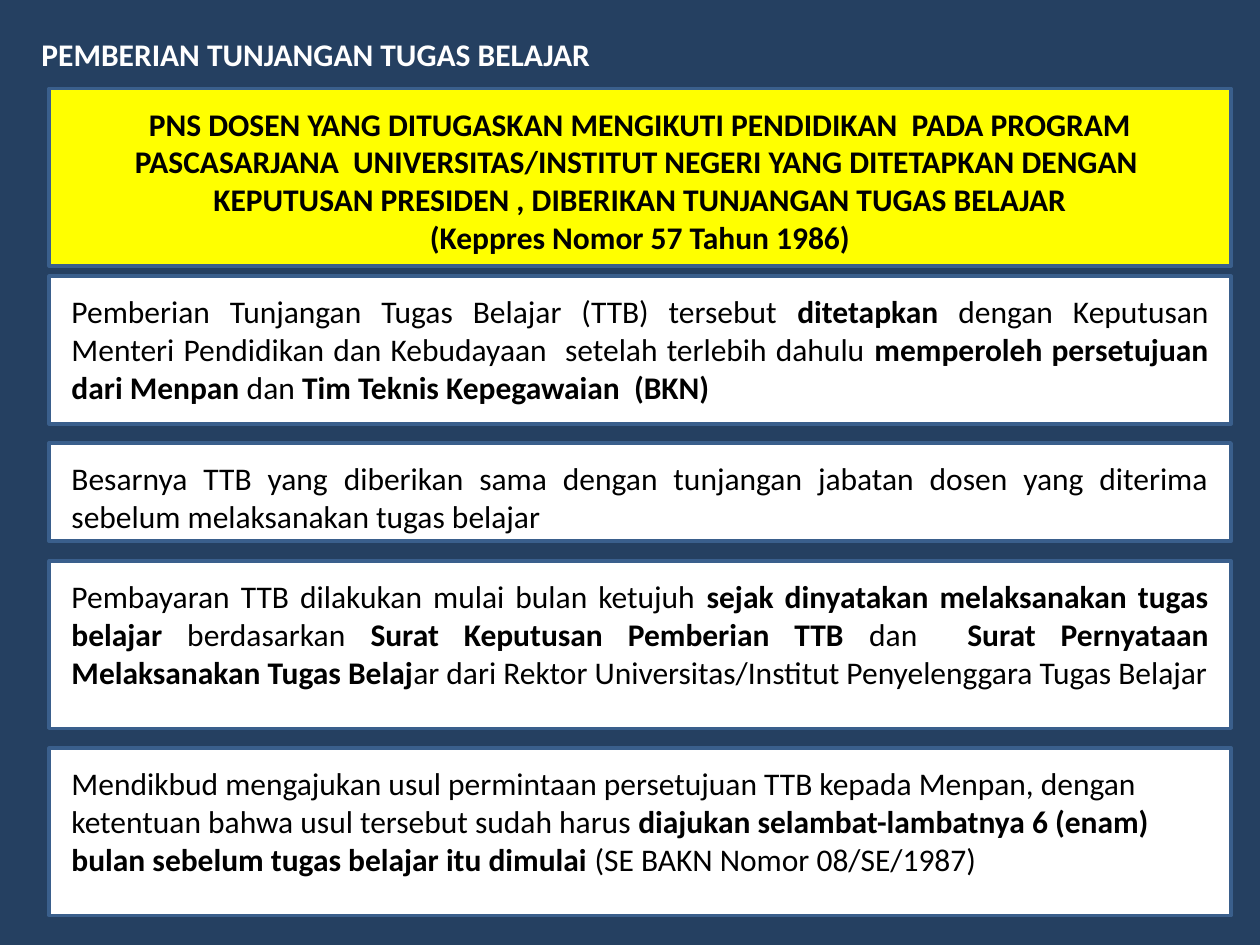
from dataclasses import dataclass

from pptx import Presentation
from pptx.dml.color import RGBColor
from pptx.enum.shapes import MSO_SHAPE
from pptx.enum.text import MSO_AUTO_SIZE, PP_ALIGN
from pptx.util import Pt


@dataclass(frozen=True)
class Theme:
    background: str = "254061"
    border: str = "3A5F8C"
    highlight: str = "FFFF00"
    panel: str = "FFFFFF"
    title: str = "FFFFFF"
    body: str = "000000"
    font: str = "Calibri"
    size: int = 18
    border_width: int = 2


PANEL_LEFT, PANEL_WIDTH = 28.1, 675.4
PADDING = 5.7
LINE_HEIGHT, TEXT_MARGINS = 21.9, 7.2

HEADING = [
    ["", "PNS DOSEN YANG DITUGASKAN MENGIKUTI PENDIDIKAN  PADA PROGRAM "
         "PASCASARJANA  UNIVERSITAS/INSTITUT NEGERI YANG DITETAPKAN DENGAN  "
         "KEPUTUSAN PRESIDEN , DIBERIKAN TUNJANGAN TUGAS BELAJAR"],
    ["", "(Keppres Nomor 57 Tahun 1986)"],
]
APPROVAL = [[
    "Pemberian Tunjangan Tugas Belajar (TTB) tersebut ", "ditetapkan ",
    "dengan Keputusan Menteri Pendidikan dan Kebudayaan  setelah terlebih dahulu ",
    "memperoleh persetujuan dari Menpan", " dan ", "Tim Teknis Kepegawaian  (BKN)",
]]
AMOUNT = [[
    "Besarnya TTB yang diberikan sama dengan tunjangan jabatan dosen yang "
    "diterima sebelum melaksanakan tugas belajar",
]]
PAYMENT = [[
    "Pembayaran TTB dilakukan mulai bulan ketujuh ",
    "sejak dinyatakan melaksanakan tugas belajar", " berdasarkan ",
    "Surat Keputusan Pemberian TTB ", "dan  ",
    "Surat Pernyataan Melaksanakan Tugas Belaj",
    "ar dari Rektor Universitas/Institut Penyelenggara Tugas Belajar",
]]
PROPOSAL = [[
    "Mendikbud mengajukan usul permintaan persetujuan TTB kepada Menpan, dengan "
    "ketentuan bahwa usul tersebut sudah harus ",
    "diajukan selambat-lambatnya 6 (enam) bulan sebelum tugas belajar itu dimulai ",
    "(SE BAKN Nomor 08/SE/1987)",
]]


class SlideBuilder:
    def __init__(self, slide, theme):
        self.slide = slide
        self.theme = theme

    def background(self):
        fill = self.slide.background.fill
        fill.solid()
        fill.fore_color.rgb = RGBColor.from_string(self.theme.background)

    def box(self, left, top, width, height, color):
        shape = self.slide.shapes.add_shape(
            MSO_SHAPE.RECTANGLE, Pt(left), Pt(top), Pt(width), Pt(height))
        shape.shadow.inherit = False
        shape.fill.solid()
        shape.fill.fore_color.rgb = RGBColor.from_string(color)
        shape.line.color.rgb = RGBColor.from_string(self.theme.border)
        shape.line.width = Pt(self.theme.border_width)

    def text(self, left, top, width, lines, paragraphs, color, alignment):
        """Each paragraph lists its pieces, plain and bold by turns."""
        height = lines * LINE_HEIGHT + TEXT_MARGINS
        shape = self.slide.shapes.add_textbox(Pt(left), Pt(top), Pt(width), Pt(height))
        text_frame = shape.text_frame
        text_frame.word_wrap = True
        text_frame.auto_size = MSO_AUTO_SIZE.SHAPE_TO_FIT_TEXT
        for number, pieces in enumerate(paragraphs):
            paragraph = text_frame.add_paragraph() if number else text_frame.paragraphs[0]
            paragraph.alignment = alignment
            for index, piece in enumerate(pieces):
                if piece:
                    self.run(paragraph, piece, color, bold=index % 2 == 1)

    def run(self, paragraph, content, color, bold):
        run = paragraph.add_run()
        run.text = content
        run.font.name = self.theme.font
        run.font.size = Pt(self.theme.size)
        run.font.bold = bold
        run.font.color.rgb = RGBColor.from_string(color)

    def panel(self, top, height, lines, paragraphs, color, alignment):
        self.box(PANEL_LEFT, top, PANEL_WIDTH, height, color)
        self.text(PANEL_LEFT + PADDING, top + PADDING, PANEL_WIDTH - 2 * PADDING,
                  lines, paragraphs, self.theme.body, alignment)


def main():
    presentation = Presentation()
    presentation.slide_width, presentation.slide_height = Pt(720), Pt(540)
    slide = presentation.slides.add_slide(presentation.slide_layouts[6])
    theme = Theme()
    builder = SlideBuilder(slide, theme)

    builder.background()
    builder.text(16.6, 16.6, 686, 1, [["", "PEMBERIAN TUNJANGAN TUGAS BELAJAR"]],
                 theme.title, PP_ALIGN.LEFT)
    panels = [
        (50.6, 101.3, 4, HEADING, theme.highlight, PP_ALIGN.CENTER),
        (157.8, 84.4, 3, APPROVAL, theme.panel, PP_ALIGN.JUSTIFY),
        (253.1, 56.2, 2, AMOUNT, theme.panel, PP_ALIGN.JUSTIFY),
        (320.6, 95.6, 3, PAYMENT, theme.panel, PP_ALIGN.JUSTIFY),
        (427.5, 95.6, 3, PROPOSAL, theme.panel, PP_ALIGN.LEFT),
    ]
    for panel in panels:
        builder.panel(*panel)

    presentation.save("out.pptx")


if __name__ == "__main__":
    main()
